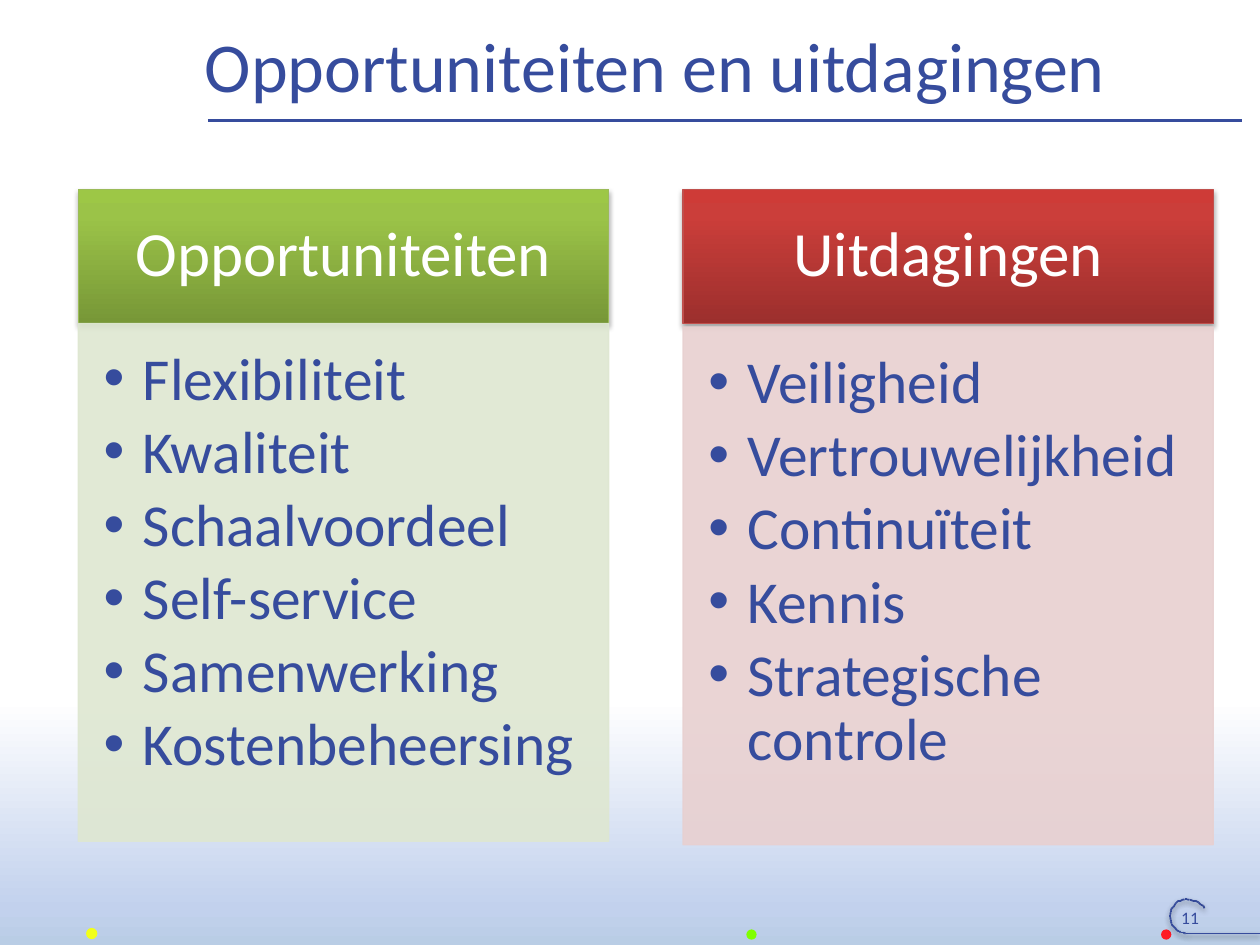
import itertools

import pptx
import pptx.util
import pptx.dml.color
import pptx.enum.shapes
import pptx.enum.text
import pptx.oxml.ns
import lxml.etree

Cm = pptx.util.Cm
Pt = pptx.util.Pt
qn = pptx.oxml.ns.qn
RECTANGLE = pptx.enum.shapes.MSO_SHAPE.RECTANGLE
OVAL = pptx.enum.shapes.MSO_SHAPE.OVAL
ALIGN = pptx.enum.text.PP_ALIGN
ANCHOR = pptx.enum.text.MSO_ANCHOR

BLUE = "364C9D"
COLUMN_WIDTH = 10.69
HEADER_TOP, HEADER_HEIGHT = 3.82, 2.7
LIST_HEIGHT = 10.44

# Left, list top, heading, gradient, heading line, list fill, items
COLUMNS = [
    (13.77, 6.59, "Uitdagingen",
     [(0, "9C2F2D"), (80, "CB3E3A"), (100, "CE3B37")], "C0504D", "E8D0D0",
     ["Veiligheid", "Vertrouwelijkheid", "Continuïteit", "Kennis",
      "Strategische controle"]),
    (1.58, 6.52, "Opportuniteiten",
     [(0, "779737"), (80, "9BC348"), (100, "9DC746")], "9BBB59", "DEE7D1",
     ["Flexibiliteit", "Kwaliteit", "Schaalvoordeel", "Self-service",
      "Samenwerking", "Kostenbeheersing"]),
]

# Left, top, diameter, colour
DOTS = [(23.42, 18.75, 0.18, "FF1A26"), (15.06, 18.75, 0.18, "80FF00"),
        (1.75, 18.72, 0.2, "F2FF1A")]

# Curl around the page number, running out to the right edge
CURL = [
    (24.28, 18.31), (24.26, 18.26), (24.21, 18.24), (24.16, 18.19), (24.1, 18.16),
    (24.05, 18.16), (24, 18.14), (23.98, 18.14), (23.93, 18.13), (23.88, 18.13),
    (23.83, 18.14), (23.8, 18.16), (23.75, 18.16), (23.72, 18.19), (23.7, 18.21),
    (23.67, 18.26), (23.65, 18.29), (23.62, 18.31), (23.6, 18.36), (23.6, 18.39),
    (23.59, 18.44), (23.59, 18.49), (23.6, 18.54), (23.6, 18.57), (23.62, 18.62),
    (23.62, 18.64), (23.65, 18.67), (23.67, 18.69), (23.7, 18.72), (23.72, 18.75),
    (23.75, 18.77), (23.77, 18.77), (23.8, 18.8), (23.83, 18.8), (23.85, 18.8),
    (23.88, 18.81), (23.9, 18.82), (23.93, 18.82), (23.95, 18.82), (25.4, 18.82)]


def color(hex_value):
    return pptx.dml.color.RGBColor.from_string(hex_value)


def place(shape, left, top, width, height):
    shape.left, shape.top = Cm(left), Cm(top)
    shape.width, shape.height = Cm(width), Cm(height)


def fill_solid(shape, hex_value):
    shape.fill.solid()
    shape.fill.fore_color.rgb = color(hex_value)


def set_line(shape, hex_value, width):
    shape.line.color.rgb = color(hex_value)
    shape.line.width = Pt(width)


def fill_upward(shape, stops):
    """Gradient from the bottom edge to the top edge."""
    shape.fill.gradient()
    shape.fill.gradient_angle = 90
    stop_list = next(shape._element.spPr.iter(qn("a:gsLst")))
    for stop in list(stop_list):
        stop_list.remove(stop)
    for position, hex_value in stops:
        stop = lxml.etree.SubElement(stop_list, qn("a:gs"), pos=str(position * 1000))
        lxml.etree.SubElement(stop, qn("a:srgbClr"), val=hex_value)


def add_shadow(shape, opacity, blur, distance):
    effects = shape._element.spPr.find(qn("a:effectLst"))
    shadow = lxml.etree.SubElement(
        effects, qn("a:outerShdw"), blurRad=str(Pt(blur)), dist=str(Pt(distance)),
        dir="5400000", rotWithShape="0")
    shade = lxml.etree.SubElement(shadow, qn("a:srgbClr"), val="000000")
    lxml.etree.SubElement(shade, qn("a:alpha"), val=str(opacity * 1000))


def set_opacity(shape, percent):
    for shade in shape._element.spPr.iter(qn("a:srgbClr")):
        lxml.etree.SubElement(shade, qn("a:alpha"), val=str(percent * 1000))


def send_behind_placeholders(slide, shape):
    slide.shapes.title._element.addprevious(shape._element)


def set_frame(shape, margins, anchor):
    frame = shape.text_frame
    frame.word_wrap = True
    frame.auto_size = pptx.enum.text.MSO_AUTO_SIZE.NONE
    frame.vertical_anchor = anchor
    (frame.margin_left, frame.margin_top,
     frame.margin_right, frame.margin_bottom) = [Cm(margin) for margin in margins]
    return frame


def format_text(paragraph, size, hex_value, alignment):
    paragraph.alignment = alignment
    for run in paragraph.runs:
        run.font.name = "Calibri"
        run.font.size = Pt(size)
        run.font.color.rgb = color(hex_value)


def add_shape(slide, kind, left, top, width, height):
    shape = slide.shapes.add_shape(kind, Cm(left), Cm(top), Cm(width), Cm(height))
    shape.shadow.inherit = False
    return shape


def add_line(slide, start, end, width):
    line = slide.shapes.add_connector(
        pptx.enum.shapes.MSO_CONNECTOR.STRAIGHT,
        *[Cm(value) for value in start + end])
    set_line(line, BLUE, width)
    lxml.etree.SubElement(line._element.spPr, qn("a:effectLst"))
    return line


def add_backdrop(slide):
    backdrop = add_shape(slide, RECTANGLE, 0, 14.12, 25.4, 4.93)
    fill_upward(backdrop, [(0, "B9CDE5"), (15, "C2D1ED"), (100, "FFFFFF")])
    backdrop.line.fill.background()
    send_behind_placeholders(slide, backdrop)


def add_title(slide, text):
    title = slide.shapes.title
    place(title, 4.13, 0.38, 20.93, 1.83)
    frame = set_frame(title, (0, 0.13, 0.25, 0.13), ANCHOR.MIDDLE)
    frame.text = text
    format_text(frame.paragraphs[0], 40, BLUE, ALIGN.LEFT)
    add_line(slide, (4.19, 2.43), (25.04, 2.43), 1.5)


def add_heading(slide, left, text, stops, line):
    heading = add_shape(slide, RECTANGLE, left, HEADER_TOP, COLUMN_WIDTH, HEADER_HEIGHT)
    fill_upward(heading, stops)
    set_line(heading, line, 0.75)
    add_shadow(heading, 35, 3.1, 1.8)
    send_behind_placeholders(slide, heading)
    frame = set_frame(heading, (0.71, 0.41, 0.71, 0.41), ANCHOR.MIDDLE)
    frame.text = text
    frame.paragraphs[0].line_spacing = 0.9
    format_text(frame.paragraphs[0], 36, "FFFFFF", ALIGN.CENTER)


def fill_list(body, left, top, fill, items):
    place(body, left, top, COLUMN_WIDTH, LIST_HEIGHT)
    fill_solid(body, fill)
    set_line(body, fill, 0.75)
    set_opacity(body, 90)
    frame = set_frame(body, (0.51, 0.51, 0.66, 0.76), ANCHOR.TOP)
    frame.text = "\n".join(items)
    for paragraph in frame.paragraphs:
        paragraph.line_spacing = 0.9
        paragraph.space_before = Pt(0)
        paragraph.space_after = Pt(5.1)
        properties = paragraph._p.get_or_add_pPr()
        properties.set("marL", str(Cm(0.79)))
        properties.set("indent", str(-Cm(0.79)))
        lxml.etree.SubElement(properties, qn("a:buChar"), char="•")
        format_text(paragraph, 34, BLUE, ALIGN.LEFT)


def add_dot(slide, left, top, diameter, fill):
    dot = add_shape(slide, OVAL, left, top, diameter, diameter)
    fill_solid(dot, fill)
    set_line(dot, fill, 0)


def add_page_number(slide, number):
    for start, end in itertools.pairwise(CURL):
        add_shadow(add_line(slide, start, end, 1), 38, 3.1, 1.6)
    box = slide.shapes.add_textbox(Cm(23.24), Cm(18.16), Cm(1.35), Cm(0.61))
    frame = set_frame(box, (0.25, 0.13, 0.1, 0), ANCHOR.TOP)
    frame.text = number
    format_text(frame.paragraphs[0], 10, BLUE, ALIGN.CENTER)


def main():
    presentation = pptx.Presentation()
    presentation.slide_width, presentation.slide_height = Cm(25.4), Cm(19.05)
    # Layout with a title and two lists
    slide = presentation.slides.add_slide(presentation.slide_layouts[3])
    add_backdrop(slide)
    add_title(slide, "Opportuniteiten en uitdagingen")
    # Two columns
    for index, column in enumerate(COLUMNS, start=1):
        left, list_top, heading, stops, line, fill, items = column
        add_heading(slide, left, heading, stops, line)
        fill_list(slide.placeholders[index], left, list_top, fill, items)
    # Footer
    for dot in DOTS:
        add_dot(slide, *dot)
    add_page_number(slide, "11")
    presentation.save("out.pptx")


if __name__ == "__main__":
    main()
